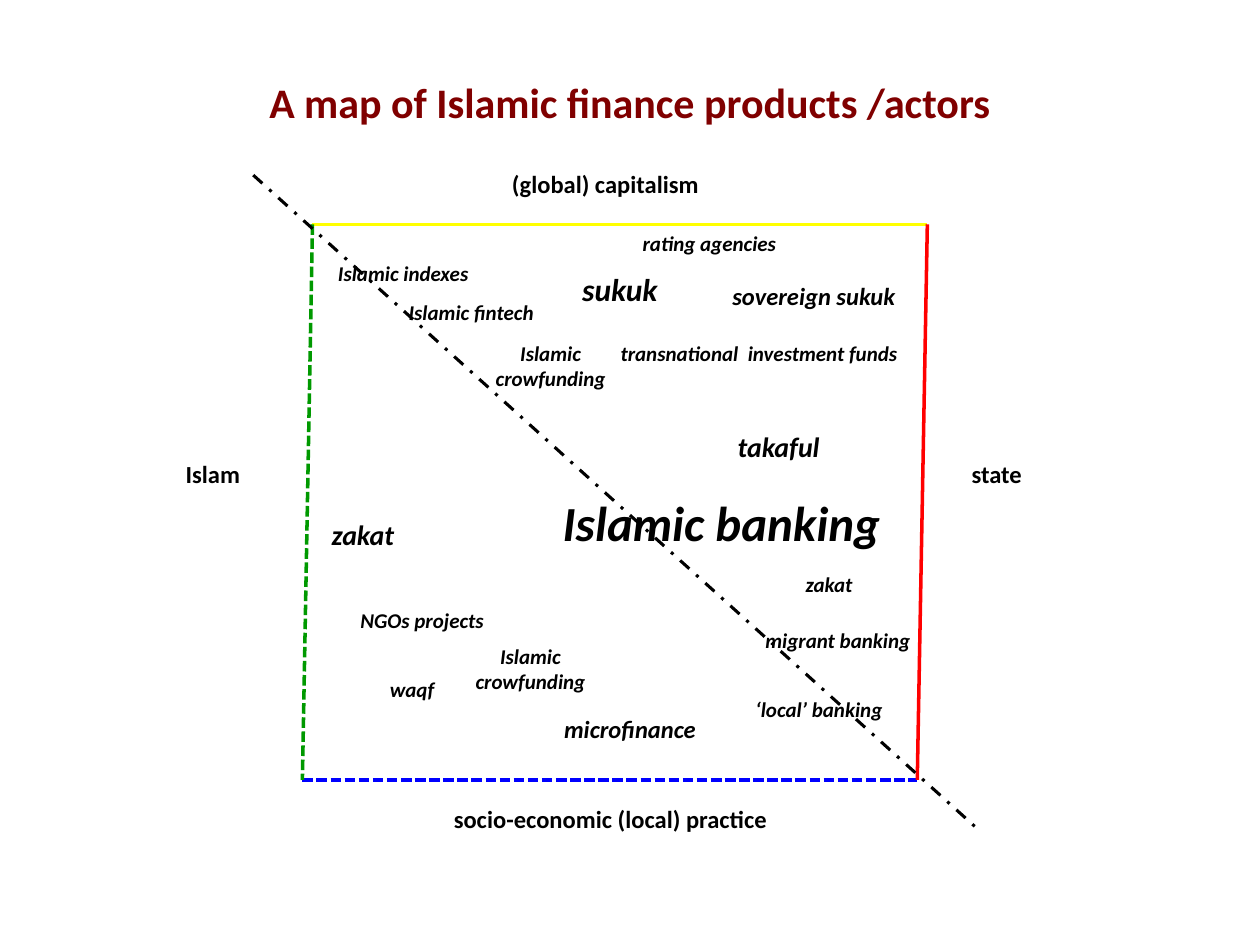
import pptx
import pptx.util
import pptx.dml.color
import pptx.enum.dml
import pptx.enum.shapes
import pptx.enum.text
import pptx.oxml.ns
import lxml.etree
from typing import Any, NamedTuple

RGB = pptx.dml.color.RGBColor
DASH = pptx.enum.dml.MSO_LINE
TEXT = pptx.enum.text

BLACK = RGB(0x00, 0x00, 0x00)
MAROON = RGB(0x80, 0x00, 0x00)
YELLOW = RGB(0xFF, 0xFF, 0x00)
BLUE = RGB(0x00, 0x00, 0xFF)
GREEN = RGB(0x00, 0x99, 0x00)
RED = RGB(0xFF, 0x00, 0x00)

WIDE = pptx.util.Inches(10)
HIGH = pptx.util.Inches(7.5)
COLS, ROWS = 100, 75


class Point(NamedTuple):
    col: float
    row: float


class Edge(NamedTuple):
    start: Point
    end: Point
    color: RGB
    dash: Any = DASH.SOLID
    width: float = 2


class Label(NamedTuple):
    text: str
    col: float
    row: float
    size: int = 12
    span: float = 14.2
    lines: int = 1
    italic: bool = True
    color: RGB = BLACK


NW, NE = Point(24.8, 17.8), Point(73.6, 17.8)
SW, SE = Point(24, 61.9), Point(72.8, 61.9)

EDGES = [
    Edge(NW, NE, YELLOW),
    Edge(SW, SE, BLUE, DASH.SQUARE_DOT),
    Edge(NW, SW, GREEN, DASH.SQUARE_DOT),
    Edge(NE, SE, RED),
    Edge(Point(20.1, 13.9), Point(77.6, 65.8), BLACK, DASH.DASH_DOT, 1.75),
]

LABELS = [
    Label("A map of Islamic finance products /actors", 5, 5.6, 24, 90,
          italic=False, color=MAROON),
    Label("(global) capitalism", 39, 12.9, 14, 18.1, italic=False),
    Label("Islam", 9.8, 35.9, 14, italic=False),
    Label("state", 72, 35.9, 14, italic=False),
    Label("socio-economic (local) practice", 34.3, 63.3, 14, 28.3, italic=False),
    Label("rating agencies", 49.2, 17.8),
    Label("Islamic indexes", 24.9, 20.2),
    Label("sukuk", 42.1, 20.9, 18),
    Label("sovereign sukuk", 57.1, 21.8, 14, 15),
    Label("Islamic fintech", 30.3, 23.3),
    Label("Islamic crowfunding", 36.6, 26.5, lines=2),
    Label("transnational  investment funds", 46.1, 26.5, span=28.3),
    Label("takaful", 54.7, 33.6, 16),
    Label("Islamic banking", 42.3, 38.6, 28, 29.9),
    Label("zakat", 21.7, 40.6, 16),
    Label("zakat", 58.7, 44.9),
    Label("NGOs projects", 26.4, 47.7),
    Label("migrant banking", 59.4, 49.3),
    Label("Islamic crowfunding", 35, 50.6, lines=2),
    Label("waqf", 25.6, 53.2),
    Label("‘local’ banking", 57.9, 54.8),
    Label("microfinance", 42.9, 56.2, 14),
]


def across(col: float) -> int:
    return round(WIDE * col / COLS)


def down(row: float) -> int:
    return round(HIGH * row / ROWS)


def style(item: Any, form: dict[str, Any]) -> None:
    for name, value in form.items():
        setattr(item, name, value)


def draw(slide: Any, edge: Edge) -> None:
    line = slide.shapes.add_connector(
        pptx.enum.shapes.MSO_CONNECTOR.STRAIGHT,
        across(edge.start.col), down(edge.start.row),
        across(edge.end.col), down(edge.end.row))
    line.line.color.rgb = edge.color
    style(line.line, {"width": pptx.util.Pt(edge.width), "dash_style": edge.dash})
    tag = pptx.oxml.ns.qn("a:effectLst")
    lxml.etree.SubElement(line.element.spPr, tag)


def write(slide: Any, label: Label) -> None:
    pad = pptx.util.Inches(0.1)
    high = pad + pptx.util.Pt(label.size * 1.2 * label.lines)
    box = slide.shapes.add_textbox(
        across(label.col), down(label.row), across(label.span), high)
    frame = box.text_frame
    style(frame, {"word_wrap": True,
                  "auto_size": TEXT.MSO_AUTO_SIZE.SHAPE_TO_FIT_TEXT})
    para = frame.paragraphs[0]
    para.alignment = TEXT.PP_ALIGN.CENTER
    run = para.add_run()
    run.text = label.text
    run.font.color.rgb = label.color
    style(run.font, {"name": "Calibri", "size": pptx.util.Pt(label.size),
                     "bold": True, "italic": label.italic})


def main() -> None:
    deck = pptx.Presentation()
    style(deck, {"slide_width": WIDE, "slide_height": HIGH})
    slide = deck.slides.add_slide(deck.slide_layouts[6])
    for edge in EDGES:
        draw(slide, edge)
    for label in LABELS:
        write(slide, label)
    deck.save("out.pptx")


if __name__ == "__main__":
    main()
